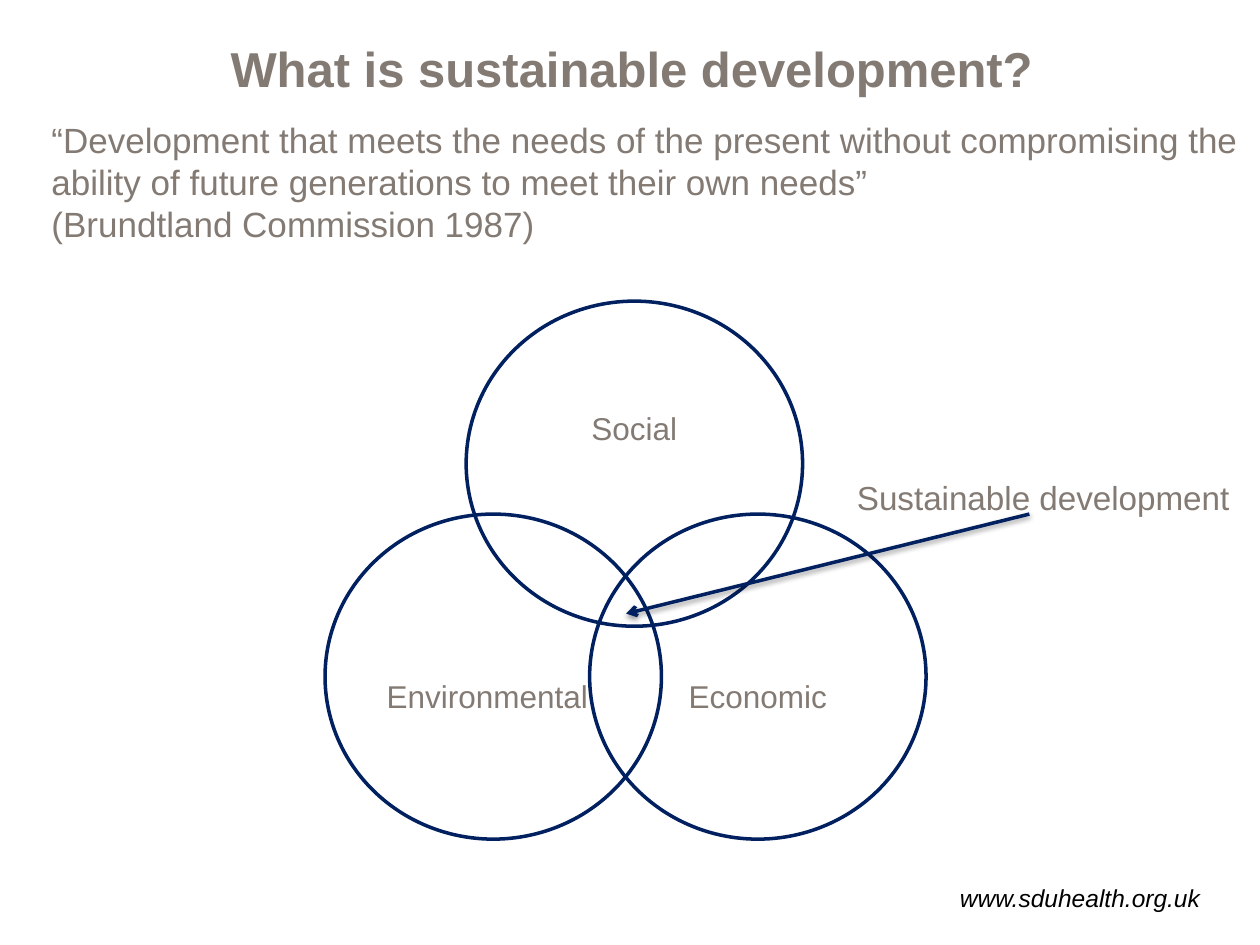
from lxml.etree import SubElement
from pptx import Presentation
from pptx.dml.color import RGBColor
from pptx.enum.shapes import MSO_CONNECTOR, MSO_SHAPE
from pptx.enum.text import MSO_ANCHOR, MSO_AUTO_SIZE, PP_ALIGN
from pptx.oxml import parse_xml
from pptx.oxml.ns import nsdecls, qn
from pptx.util import Inches, Pt

GREY = RGBColor(0x83, 0x7A, 0x73)
NAVY = RGBColor(0x00, 0x20, 0x60)
BLACK = RGBColor(0x00, 0x00, 0x00)


def add_text(p, text, size, color=GREY, align=PP_ALIGN.LEFT):
    p.alignment = align
    r = p.add_run()
    r.text = text
    r.font.name = "Arial"
    r.font.size = Pt(size)
    r.font.color.rgb = color
    return r


def add_box(x, y, w, h, wrap=True):
    tf = s.shapes.add_textbox(Inches(x), Inches(y), Inches(w), Inches(h)).text_frame
    tf.word_wrap = wrap
    return tf


prs = Presentation()
prs.slide_width, prs.slide_height = Inches(10), Inches(7.5)
s = prs.slides.add_slide(prs.slide_layouts[5])

title = s.shapes.title
title.left, title.top = Inches(1.61), Inches(-0.25)
title.width, title.height = Inches(7.24), Inches(1.58)
tf = title.text_frame
tf.auto_size = MSO_AUTO_SIZE.NONE
tf.vertical_anchor = MSO_ANCHOR.MIDDLE
tf.margin_left = Inches(0.22)
r = add_text(tf.paragraphs[0], "What is sustainable development?", 28)
r.font.bold = True

tf = add_box(7.52, 6.96, 2.19, 0.34)
r = add_text(tf.paragraphs[0], "www.sduhealth.org.uk", 14, BLACK)
r.font.italic = True

circles = [
    ("Social", 3.7, 2.39, PP_ALIGN.CENTER, 0.05, 0.61),
    ("Environmental", 2.58, 4.08, PP_ALIGN.LEFT, 0.35, 0.05),
    ("Economic", 4.68, 4.08, PP_ALIGN.CENTER, 0.35, 0.05),
]
for text, x, y, align, top, bottom in circles:
    sp = s.shapes.add_shape(MSO_SHAPE.OVAL, Inches(x), Inches(y), Inches(2.67), Inches(2.58))
    sp.shadow.inherit = False
    sp.fill.background()
    sp.line.color.rgb = NAVY
    sp.line.width = Pt(2)
    tf = sp.text_frame
    tf.vertical_anchor = MSO_ANCHOR.MIDDLE
    tf.margin_top, tf.margin_bottom = Inches(top), Inches(bottom)
    add_text(tf.paragraphs[0], text, 18, align=align)

tf = add_box(0.31, 0.89, 9.69, 1.11)
add_text(tf.paragraphs[0], "“Development that meets the needs of the present without compromising "
         "the ability of future generations to meet their own needs”", 20)
add_text(tf.add_paragraph(), "(Brundtland Commission 1987)", 20)

tf = add_box(6.68, 3.74, 3.2, 0.42, wrap=False)
add_text(tf.paragraphs[0], "Sustainable development", 19, align=PP_ALIGN.CENTER)

arrow = s.shapes.add_connector(MSO_CONNECTOR.STRAIGHT, Inches(8.17), Inches(4.08),
                               Inches(4.97), Inches(4.87))
arrow.line.color.rgb = NAVY
arrow.line.width = Pt(2)
SubElement(arrow.line._get_or_add_ln(), qn("a:tailEnd"), type="arrow")
arrow._element.spPr.append(parse_xml(
    f'<a:effectLst {nsdecls("a")}>'
    f'<a:outerShdw blurRad="{Pt(3.1)}" dist="{Pt(1.6)}" dir="5400000" rotWithShape="0">'
    '<a:srgbClr val="000000"><a:alpha val="38000"/></a:srgbClr>'
    '</a:outerShdw></a:effectLst>'))

prs.save("out.pptx")
